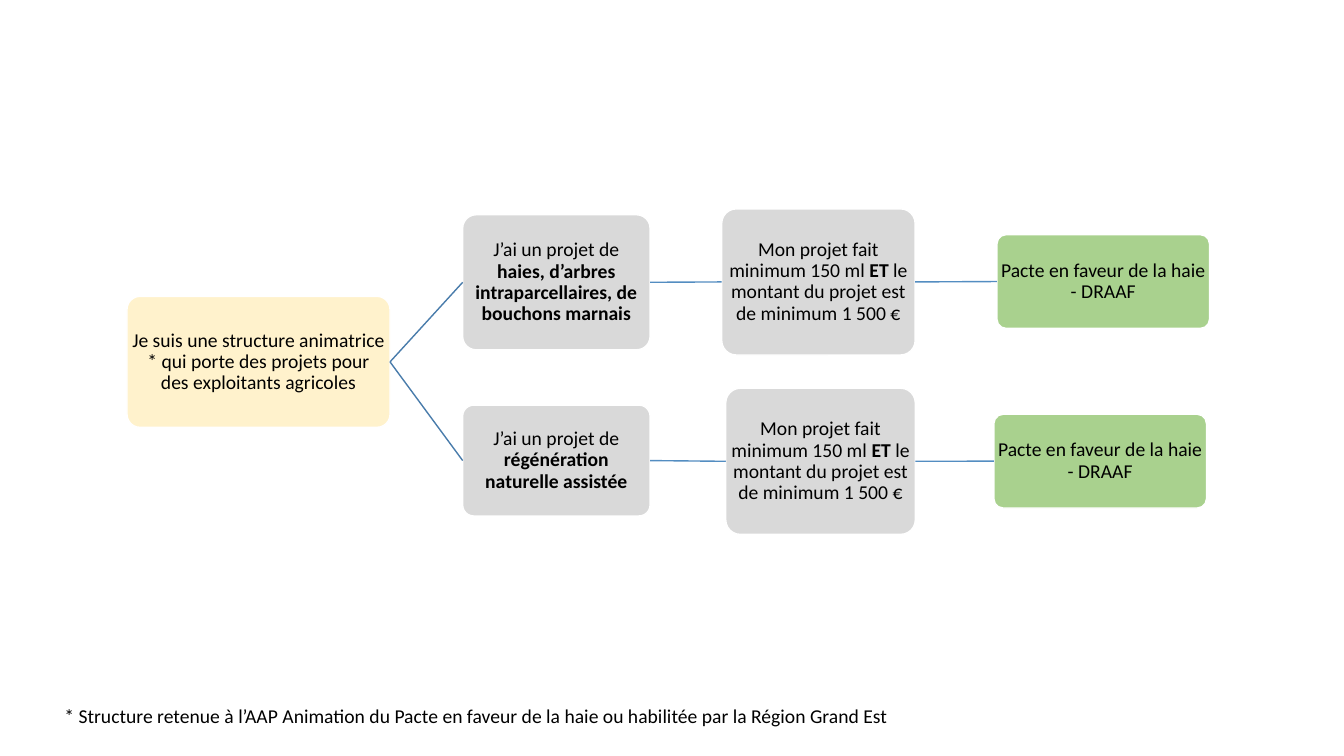
from dataclasses import dataclass

import pptx
import pptx.dml.color
import pptx.enum.shapes
import pptx.enum.text
import pptx.oxml
import pptx.util
from lxml import etree

Pt = pptx.util.Pt


@dataclass(frozen=True)
class Theme:
    font: str = "Calibri"
    size: float = 14
    line_width: float = 1
    text: str = "000000"
    outline: str = "FFFFFF"
    start: str = "FFF2CC"
    question: str = "D9D9D9"
    outcome: str = "A9D18E"
    branch: str = "497CAB"
    step: str = "538DC1"


@dataclass(frozen=True)
class Run:
    text: str
    bold: bool = False


@dataclass(frozen=True)
class Box:
    left: float
    top: float
    width: float
    height: float
    fill: str
    runs: tuple[Run, ...]


THEME = Theme()


def rgb(colour: str) -> pptx.dml.color.RGBColor:
    return pptx.dml.color.RGBColor.from_string(colour)


def write_runs(paragraph, runs: tuple[Run, ...]) -> None:
    for part in runs:
        run = paragraph.add_run()
        run.text = part.text
        run.font.name = THEME.font
        run.font.size = Pt(THEME.size)
        run.font.bold = part.bold
        run.font.color.rgb = rgb(THEME.text)


def draw_box(slide, box: Box):
    shape = slide.shapes.add_shape(
        pptx.enum.shapes.MSO_SHAPE.ROUNDED_RECTANGLE,
        Pt(box.left), Pt(box.top), Pt(box.width), Pt(box.height))
    shape.adjustments[0] = 0.1
    shape.shadow.inherit = False
    shape.fill.solid()
    shape.fill.fore_color.rgb = rgb(box.fill)
    shape.line.color.rgb = rgb(THEME.outline)
    shape.line.width = Pt(THEME.line_width)

    frame = shape.text_frame
    frame.word_wrap = True
    frame.vertical_anchor = pptx.enum.text.MSO_ANCHOR.MIDDLE
    frame.margin_left = frame.margin_right = Pt(0.7)
    frame.margin_top = frame.margin_bottom = Pt(0.7)
    paragraph = frame.paragraphs[0]
    paragraph.alignment = pptx.enum.text.PP_ALIGN.CENTER
    paragraph.line_spacing = 0.9
    write_runs(paragraph, box.runs)
    return shape


def link(slide, source, target, colour: str) -> None:
    """Join the right side of source to the left side of target."""
    connector = slide.shapes.add_connector(
        pptx.enum.shapes.MSO_CONNECTOR.STRAIGHT, 0, 0, 0, 0)
    connector.begin_connect(source, 3)
    connector.end_connect(target, 1)
    connector.line.color.rgb = rgb(colour)
    connector.line.width = Pt(THEME.line_width)
    etree.SubElement(connector._element.spPr, pptx.oxml.ns.qn("a:effectLst"))


# Wording shared by both branches
PROJECT = Run("J’ai un projet de ")
CONDITION = (Run("Mon projet fait minimum 150 ml "), Run("ET", True),
             Run(" le montant du projet est de minimum 1 500 €"))
PACT = (Run("Pacte en faveur de la haie - DRAAF"),)

# Decision tree content
STRUCTURE = Box(90.7, 211.7, 187.9, 93.6, THEME.start, (
    Run("Je suis une structure animatrice * qui porte des projets "
        "pour des exploitants agricoles"),))
BRANCHES = (
    (Box(330.5, 153.4, 133.9, 96.5, THEME.question, (
        PROJECT,
        Run("haies, d’arbres intraparcellaires, de bouchons marnais", True))),
     Box(515.5, 149.2, 138.2, 104.4, THEME.question, CONDITION),
     Box(712.1, 167.6, 151.9, 67, THEME.outcome, PACT)),
    (Box(330.5, 289.4, 133.9, 79.2, THEME.question, (
        PROJECT, Run("régénération naturelle assistée", True))),
     Box(518.4, 277.3, 135.4, 104.4, THEME.question, CONDITION),
     Box(709.9, 295.9, 151.9, 67, THEME.outcome, PACT)),
)
FOOTNOTE = Run("* Structure retenue à l’AAP Animation du Pacte en faveur "
               "de la haie ou habilitée par la Région Grand Est")


def main() -> None:
    presentation = pptx.Presentation()
    presentation.slide_width, presentation.slide_height = Pt(960), Pt(540)
    slide = presentation.slides.add_slide(presentation.slide_layouts[6])

    # Tree: one starting box, two branches of three boxes
    structure = draw_box(slide, STRUCTURE)
    for branch in BRANCHES:
        project, condition, pact = [draw_box(slide, box) for box in branch]
        link(slide, structure, project, THEME.branch)
        link(slide, project, condition, THEME.step)
        link(slide, condition, pact, THEME.step)

    # Footnote
    footnote = slide.shapes.add_textbox(Pt(38.9), Pt(499), Pt(830.2), Pt(24.5))
    footnote.text_frame.word_wrap = True
    footnote.text_frame.auto_size = (
        pptx.enum.text.MSO_AUTO_SIZE.SHAPE_TO_FIT_TEXT)
    write_runs(footnote.text_frame.paragraphs[0], (FOOTNOTE,))

    presentation.save("out.pptx")


if __name__ == "__main__":
    main()
